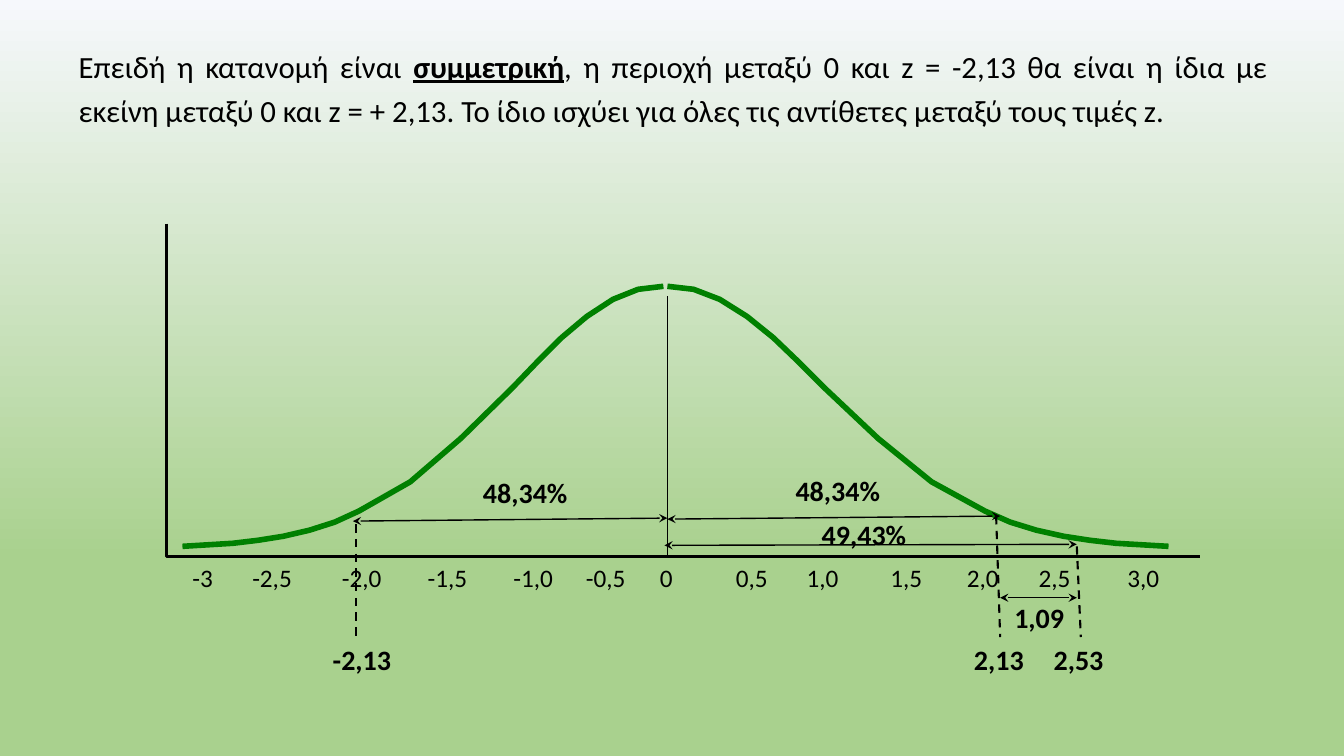
from lxml import etree
from pptx import Presentation
from pptx.dml.color import RGBColor
from pptx.enum.dml import MSO_LINE
from pptx.enum.shapes import MSO_CONNECTOR
from pptx.enum.text import MSO_AUTO_SIZE, PP_ALIGN
from pptx.oxml.ns import qn
from pptx.util import Emu, Pt

PX = 9144  # one hundredth of an inch
STRAIGHT = MSO_CONNECTOR.STRAIGHT
DASH = MSO_LINE.DASH
JUSTIFY = PP_ALIGN.JUSTIFY
FIT_SHAPE = MSO_AUTO_SIZE.SHAPE_TO_FIT_TEXT

COLORS = {"ink": "000000", "curve": "008000", "sky": "F6F8FC", "grass": "A9D18E"}

# Distance from the outer end of the curve, and height on the slide
BELL_PROFILE = [
    (0, 542), (50, 539), (75, 536), (100, 532), (126, 526), (151, 518),
    (175, 507), (226, 478), (276, 435), (327, 385), (352, 359), (376, 335),
    (401, 314), (427, 297), (452, 287), (477, 284),
]
# Left edge of the text box, its width, and (label, centre) along the axis
AXIS_LABELS = [
    (181, 540, [("-3", 200), ("-2,5", 270), ("-2,0", 359), ("-1,5", 444),
                ("-1,0", 529), ("-0,5", 601), ("0", 661)]),
    (720, 493, [("0,5", 745), ("1,0", 816), ("1,5", 899), ("2,0", 975),
                ("2,5", 1046), ("3,0", 1134)]),
]
VALUES = [
    ("-2,13", 330, 636, 73), ("2,13", 966, 636, 59), ("2,53", 1045, 636, 59),
    ("48,34%", 479, 471, 92), ("48,34%", 789, 469, 92),
    ("49,43%", 815, 512, 92), ("1,09", 1006, 595, 59),
]
SPANS = [
    ((662, 515), (992, 512)), ((350, 517), (662, 514)),
    ((659, 541), (1068, 540)), ((992, 593), (1068, 593)),
]
MARKERS = [
    ((988, 512), (992, 632)), ((353, 520), (353, 632)), ((1068, 542), (1072, 632)),
]
STATEMENT = [
    ("Επειδή η κατανομή είναι ", False),
    ("συμμετρική", True),
    (", η περιοχή μεταξύ 0 και z = -2,13 θα είναι η ίδια με εκείνη μεταξύ 0 "
     "και z = + 2,13. Το ίδιο ισχύει για όλες τις αντίθετες μεταξύ τους τιμές z.",
     False),
]


def rgb(name):
    return RGBColor.from_string(COLORS[name])


class SlideBuilder:
    font_name = "Calibri"
    inset = 10

    def __init__(self, presentation):
        self.slide = presentation.slides.add_slide(presentation.slide_layouts[6])

    def background(self):
        fill = self.slide.background.fill
        fill.gradient()
        fill.gradient_angle = 270
        for stop, name, position in zip(fill.gradient_stops, ("sky", "grass"), (0, 0.74)):
            stop.color.rgb = rgb(name)
            stop.position = position

    def text_box(self, left, top, width, height, size, tight=True):
        """Add an empty text box and return its styled paragraph."""
        shape = self.slide.shapes.add_textbox(
            *(Emu(length * PX) for length in (left, top, width, height)))
        frame = shape.text_frame
        frame.word_wrap = True
        frame.auto_size = FIT_SHAPE
        paragraph = frame.paragraphs[0]
        if tight:
            frame.margin_left = frame.margin_right = frame.margin_bottom = 0
            frame.margin_top = Emu(PX)
            paragraph.space_before = Pt(0.9)
        paragraph.font.name = self.font_name
        paragraph.font.size = Pt(size)
        paragraph.font.color.rgb = rgb("ink")
        return paragraph

    def value(self, text, left, top, width):
        paragraph = self.text_box(left, top, width, 35, 20)
        paragraph.font.bold = True
        paragraph.add_run().text = text

    def statement(self, parts):
        paragraph = self.text_box(78, 39, 1179, 87, 22)
        paragraph.alignment = JUSTIFY
        paragraph.line_spacing = 1.2
        for text, stressed in parts:
            run = paragraph.add_run()
            run.text = text
            if stressed:
                run.font.bold = run.font.underline = True

    def axis_labels(self, left, width, labels):
        """Set a row of labels, each after the first centred on a tab stop."""
        paragraph = self.text_box(left, 553, width, 40, 18, tight=False)
        paragraph.add_run().text = "\t".join(text for text, _ in labels)
        tabs = etree.Element(qn("a:tabLst"))
        for _, centre in labels[1:]:
            position = (centre - left - self.inset) * PX
            etree.SubElement(tabs, qn("a:tab"), pos=str(position), algn="ctr")
        paragraph.font._element.addprevious(tabs)

    def polyline(self, points, color, weight):
        builder = self.slide.shapes.build_freeform(*points[0], scale=PX)
        builder.add_line_segments(points[1:], close=False)
        shape = builder.convert_to_shape()
        shape.shadow.inherit = False
        shape.fill.background()
        shape.line.color.rgb = rgb(color)
        shape.line.width = Pt(weight)

    def line(self, start, end, weight=1, dashed=False, arrows=False):
        connector = self.slide.shapes.add_connector(
            STRAIGHT, *(Emu(length * PX) for length in start + end))
        connector.line.color.rgb = rgb("ink")
        connector.line.width = Pt(weight)
        if dashed:
            connector.line.dash_style = DASH
        properties = connector._element.spPr
        if arrows:
            outline = properties.find(qn("a:ln"))
            for tag in ("a:headEnd", "a:tailEnd"):
                etree.SubElement(outline, qn(tag), type="stealth")
        etree.SubElement(properties, qn("a:effectLst"))


def main():
    presentation = Presentation()
    presentation.slide_width = Emu(1333 * PX)
    presentation.slide_height = Emu(750 * PX)
    builder = SlideBuilder(presentation)
    builder.background()

    for left, width, labels in AXIS_LABELS:
        builder.axis_labels(left, width, labels)

    builder.polyline([(165, 222), (165, 552), (1190, 552)], "ink", 2)
    half_width = BELL_PROFILE[-1][0]
    for outer, inner in ((1159, 662), (181, 658)):
        stretch = (inner - outer) / half_width
        points = [(round(outer + x * stretch), y) for x, y in BELL_PROFILE]
        builder.polyline(points, "curve", 4)

    builder.line((662, 294), (662, 553))
    for start, end in SPANS:
        builder.line(start, end, arrows=True)
    for start, end in MARKERS:
        builder.line(start, end, weight=1.5, dashed=True)
    for value in VALUES:
        builder.value(*value)
    builder.statement(STATEMENT)

    presentation.save("out.pptx")


if __name__ == "__main__":
    main()
